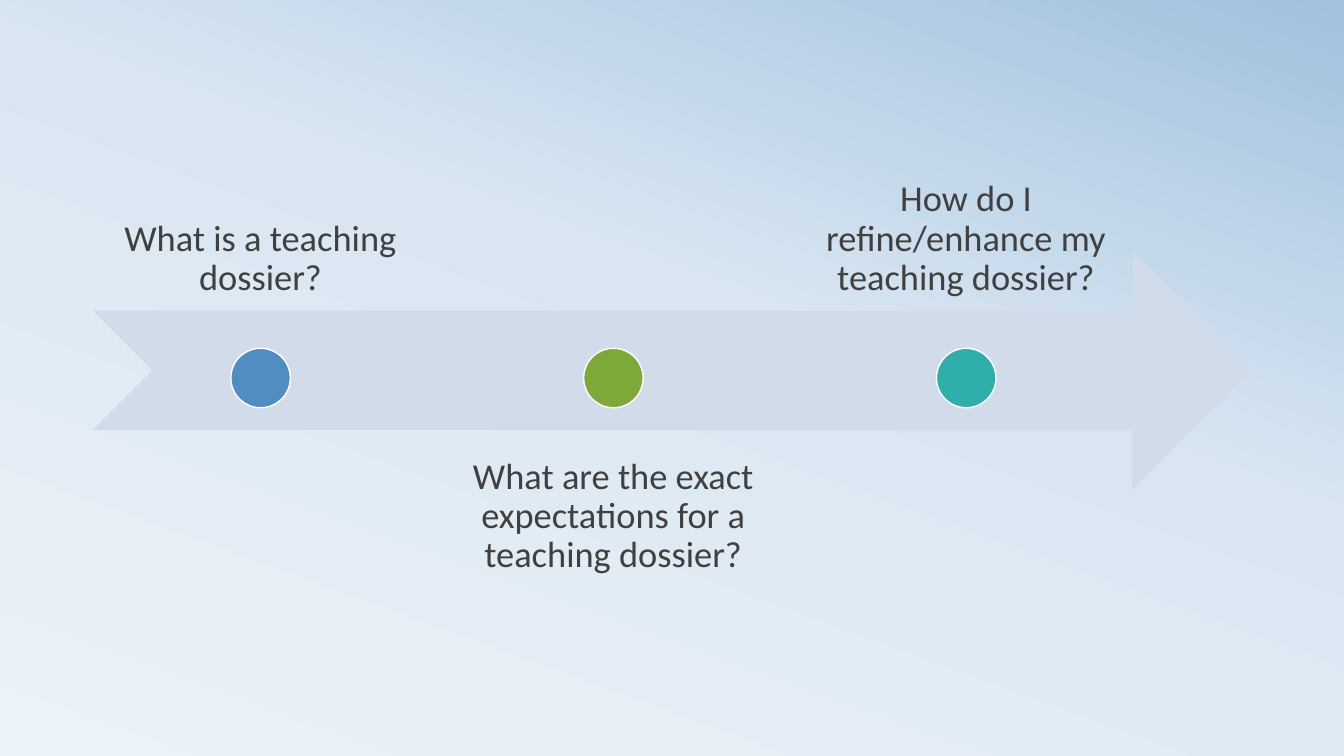
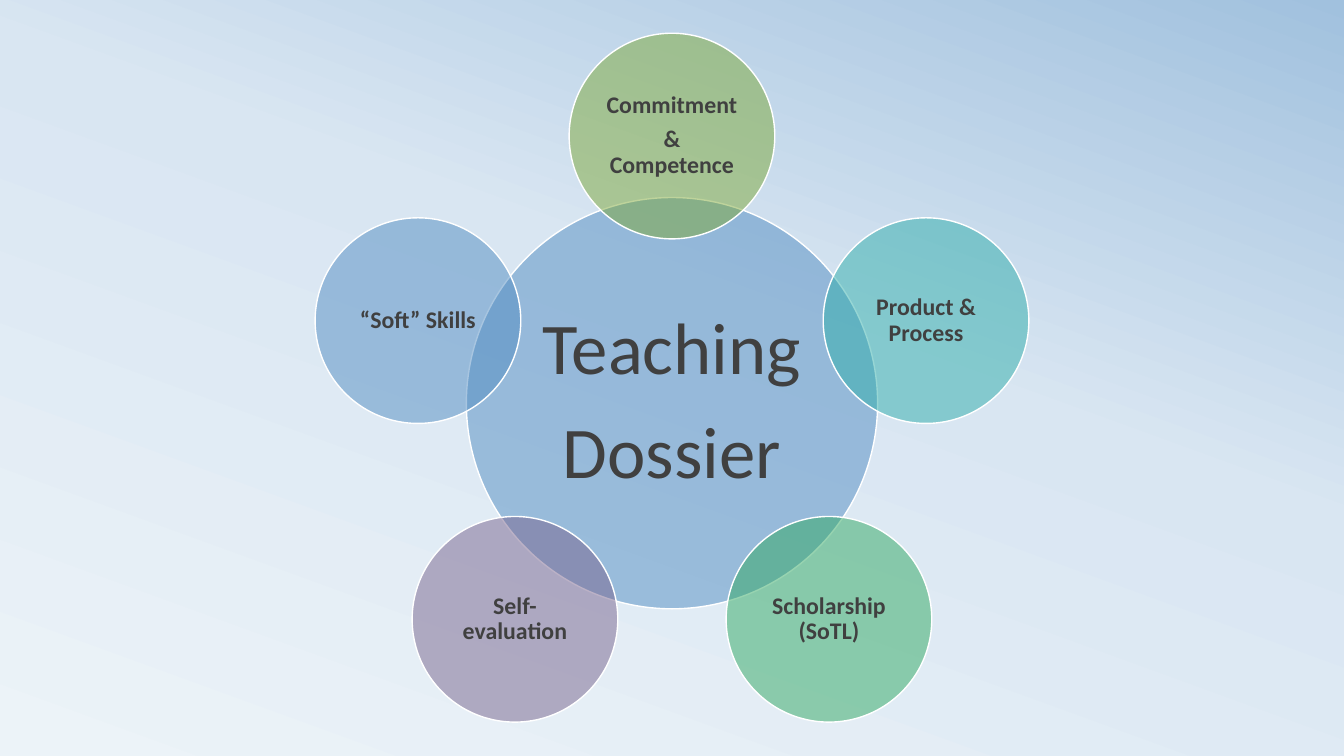
from copy import deepcopy
from math import cos, pi, sin
from lxml import etree
from pptx import Presentation, util as u
from pptx.dml.color import RGBColor
from pptx.enum import shapes, text
from pptx.oxml import ns

HUES = {
    "ink": "404040", "white": "FFFFFF", "band": "D1DBE9",
    "blue": "528DC2", "lime": "7EA939", "teal": "30AEAB",
    "green": "31A962", "plum": "78648E",
}
SKY = [(0, "ECF3F8"), (0.58, "D9E6F2"), (1, "A1C1DE")]
WIDE, HIGH = 13.333, 7.5

deck = Presentation()
deck.slide_width, deck.slide_height = u.Inches(WIDE), u.Inches(HIGH)

fill = deck.slide_master.background.fill
fill.gradient()
fill.gradient_angle = 70
stops = deck.slide_master.element.find(".//" + ns.qn("a:gsLst"))
stops.append(deepcopy(stops[-1]))
for stop, (spot, hue) in zip(fill.gradient_stops, SKY):
    stop.position = spot
    stop.color.rgb = RGBColor.from_string(hue)


def write(shape, lines, size, inset, anchor, bold=False):
    frame = shape.text_frame
    frame.word_wrap = True
    frame.vertical_anchor = anchor
    frame.margin_left = frame.margin_right = u.Inches(inset)
    frame.margin_top = frame.margin_bottom = u.Inches(inset)
    frame.text = lines
    for para in frame.paragraphs:
        para.alignment = text.PP_ALIGN.CENTER
        para.line_spacing = 0.9
        para.space_after = u.Pt(size * 0.35)
        para.font.name = "Calibri"
        para.font.size = u.Pt(size)
        para.font.bold = bold
        para.font.color.rgb = RGBColor.from_string(HUES["ink"])


def disc(slide, x, y, size, hue, alpha=100):
    box = [u.Inches(n) for n in (x - size / 2, y - size / 2, size, size)]
    shape = slide.shapes.add_shape(shapes.MSO_SHAPE.OVAL, *box)
    shape.shadow.inherit = False
    shape.fill.solid()
    shape.fill.fore_color.rgb = RGBColor.from_string(HUES[hue])
    shape.line.color.rgb = RGBColor.from_string(HUES["white"])
    shape.line.width = u.Pt(1)
    if alpha < 100:
        tint = shape.fill._xPr.find(ns.qn("a:solidFill"))[0]
        etree.SubElement(tint, ns.qn("a:alpha"), val=str(alpha * 1000))
    return shape


blank = deck.slide_layouts[6]

road = deck.slides.add_slide(blank)
left, step, col, row = 0.92, 3.5, 3.33, 2.37
arrow = road.shapes.add_shape(
    shapes.MSO_SHAPE.NOTCHED_RIGHT_ARROW,
    u.Inches(left), u.Inches(2.49), u.Inches(11.5), u.Inches(row))
arrow.shadow.inherit = False
arrow.fill.solid()
arrow.fill.fore_color.rgb = RGBColor.from_string(HUES["band"])
arrow.line.fill.background()

above, below = (0.79, text.MSO_ANCHOR.BOTTOM), (4.34, text.MSO_ANCHOR.TOP)
asks = [
    ("What is a teaching dossier?", "blue", above),
    ("What are the exact expectations for a teaching dossier?", "lime", below),
    ("How do I refine/enhance my teaching dossier?", "teal", above),
]
for i, (ask, hue, (top, anchor)) in enumerate(asks):
    x = left + i * step
    box = road.shapes.add_textbox(
        u.Inches(x), u.Inches(top), u.Inches(col), u.Inches(row))
    write(box, ask, 26, 0.2, anchor)
    disc(road, x + col / 2, HIGH / 2, 0.59, hue)

wheel = deck.slides.add_slide(blank)
midx, midy, ring, hub = WIDE / 2, 4, 2.65, 4.08
middle = text.MSO_ANCHOR.MIDDLE
write(disc(wheel, midx, midy, hub, "blue", 50),
      "Teaching\nDossier", 52, 0.07, middle)
parts = [
    ("Commitment\n& Competence", "lime"),
    ("Product & Process", "teal"),
    ("Scholarship (SoTL)", "green"),
    ("Self-evaluation", "plum"),
    ("“Soft” Skills", "blue"),
]
for i, (name, hue) in enumerate(parts):
    turn = 2 * pi * i / len(parts)
    petal = disc(wheel, midx + ring * sin(turn), midy - ring * cos(turn),
                 hub / 2, hue, 50)
    write(petal, name, 17, 0.02, middle, True)

deck.save("out.pptx")
